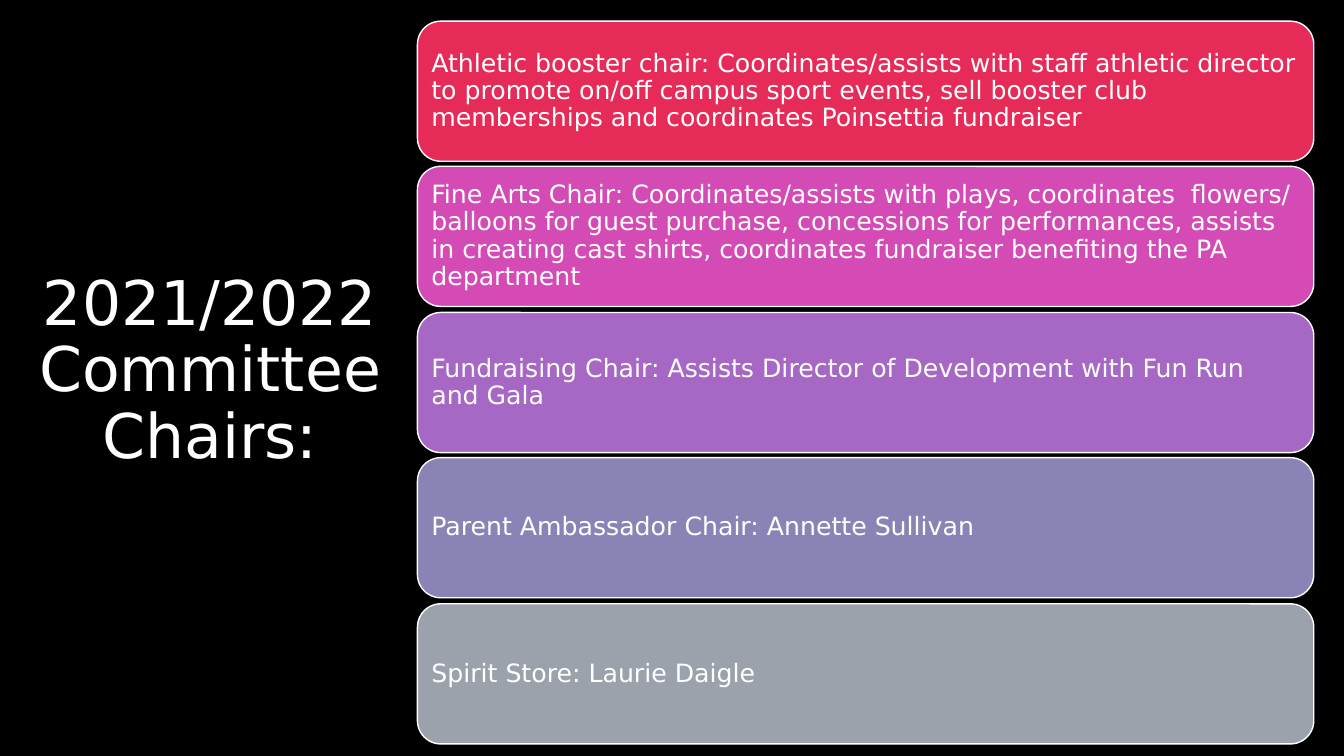
from dataclasses import dataclass

from pptx import Presentation
from pptx.dml.color import RGBColor
from pptx.enum.shapes import MSO_SHAPE
from pptx.enum.text import MSO_ANCHOR, MSO_AUTO_SIZE, PP_ALIGN
from pptx.slide import Slide
from pptx.text.text import TextFrame
from pptx.util import Emu, Pt

ROUNDED = MSO_SHAPE.ROUNDED_RECTANGLE
TOP, MIDDLE = MSO_ANCHOR.TOP, MSO_ANCHOR.MIDDLE
NO_AUTOFIT = MSO_AUTO_SIZE.NONE
LEFT, CENTER = PP_ALIGN.LEFT, PP_ALIGN.CENTER

EMU_PER_PX = 9144
SLIDE_WIDTH, SLIDE_HEIGHT = 1333, 750
CARD_LEFT, CARD_WIDTH, CARD_HEIGHT = 414, 889, 139
FIRST_TOP, LAST_TOP = 21, 599
CARD_INSET = 7
FONT = "DejaVu Sans"
COLORS = {
    "background": "000000",
    "white": "FFFFFF",
    "red": "E62B59",
    "pink": "D44BB6",
    "purple": "A668C4",
    "lavender": "8A83B6",
    "gray": "9CA2AB",
}


@dataclass(frozen=True)
class Committee:
    duties: str
    color: str


COMMITTEES = [
    Committee(
        "Athletic booster chair: Coordinates/assists with staff athletic director "
        "to promote on/off campus sport events, sell booster club memberships "
        "and coordinates Poinsettia fundraiser",
        "red",
    ),
    Committee(
        "Fine Arts Chair: Coordinates/assists with plays, coordinates  flowers/ "
        "balloons for guest purchase, concessions for performances, assists in "
        "creating cast shirts, coordinates fundraiser benefiting the PA department",
        "pink",
    ),
    Committee(
        "Fundraising Chair: Assists Director of Development with Fun Run and Gala",
        "purple",
    ),
    Committee("Parent Ambassador Chair: Annette Sullivan", "lavender"),
    Committee("Spirit Store: Laurie Daigle", "gray"),
]


def px(length: int) -> Emu:
    return Emu(length * EMU_PER_PX)


def rgb(name: str) -> RGBColor:
    return RGBColor.from_string(COLORS[name])


def apply(target: object, values: dict) -> None:
    for attribute, value in values.items():
        setattr(target, attribute, value)


def write(frame: TextFrame, text: str, size: int, alignment: int, frame_format: dict) -> None:
    apply(frame, {"word_wrap": True, "auto_size": NO_AUTOFIT, **frame_format})
    paragraph = frame.paragraphs[0]
    apply(paragraph, {"alignment": alignment, "line_spacing": 0.9})
    run = paragraph.add_run()
    run.text = text
    apply(run.font, {"name": FONT, "size": Pt(size)})
    run.font.color.rgb = rgb("white")


def draw_heading(slide: Slide, text: str) -> None:
    heading = slide.shapes.title
    apply(heading, {"left": px(0), "top": px(265), "width": px(417), "height": px(416)})
    write(heading.text_frame, text, 44, CENTER, {"vertical_anchor": TOP})


def draw_committee(slide: Slide, committee: Committee, top: int) -> None:
    card = slide.shapes.add_shape(
        ROUNDED, px(CARD_LEFT), px(top), px(CARD_WIDTH), px(CARD_HEIGHT)
    )
    card.shadow.inherit = False
    card.fill.solid()
    card.fill.fore_color.rgb = rgb(committee.color)
    card.line.color.rgb = rgb("white")
    card.line.width = Pt(1)
    margins = {f"margin_{side}": px(CARD_INSET) for side in ("left", "top", "right", "bottom")}
    write(card.text_frame, committee.duties, 18, LEFT, {"vertical_anchor": MIDDLE, **margins})


def main() -> None:
    deck = Presentation()
    apply(deck, {"slide_width": px(SLIDE_WIDTH), "slide_height": px(SLIDE_HEIGHT)})
    slide = deck.slides.add_slide(deck.slide_layouts.get_by_name("Title Only"))
    slide.background.fill.solid()
    slide.background.fill.fore_color.rgb = rgb("background")
    draw_heading(slide, "2021/2022 Committee Chairs:")
    for index, committee in enumerate(COMMITTEES):
        top = FIRST_TOP + index * (LAST_TOP - FIRST_TOP) // (len(COMMITTEES) - 1)
        draw_committee(slide, committee, top)
    deck.save("out.pptx")


if __name__ == "__main__":
    main()
